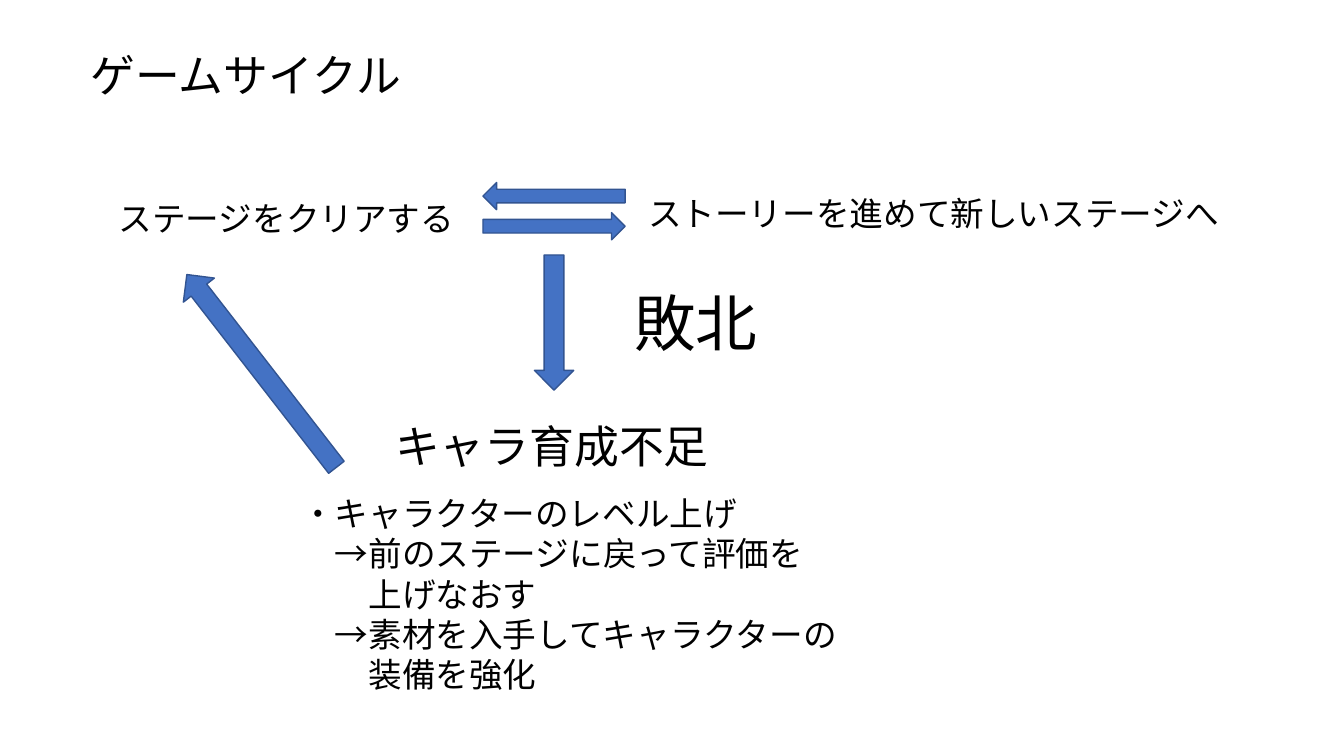
from dataclasses import dataclass

from lxml.etree import SubElement
from pptx import Presentation
from pptx.dml.color import RGBColor
from pptx.enum.shapes import MSO_SHAPE
from pptx.enum.text import MSO_ANCHOR, MSO_AUTO_SIZE
from pptx.oxml.ns import qn
from pptx.slide import Slide
from pptx.util import Emu, Pt

EMU_PER_PX = 9144  # 100 px to the inch
FONT = "Noto Sans CJK JP"
LINE_HEIGHT = 1.2
COLORS = {"text": "000000", "arrow": "4472C4", "outline": "325491"}


@dataclass(frozen=True)
class Box:
    left: int
    top: int
    width: int
    height: int


@dataclass(frozen=True)
class Line:
    text: str
    indent: int = 0  # in character widths


@dataclass(frozen=True)
class Label:
    box: Box
    size: int
    lines: tuple[Line, ...]


@dataclass(frozen=True)
class Arrow:
    box: Box
    preset: MSO_SHAPE
    rotation: float = 0


LABELS = (
    Label(Box(80, 42, 334, 64), 32, (Line("ゲームサイクル"),)),
    Label(Box(633, 186, 592, 50), 24, (Line("ストーリーを進めて新しいステージへ"),)),
    Label(Box(108, 191, 357, 50), 24, (Line("ステージをクリアする"),)),
    Label(Box(619, 278, 144, 84), 44, (Line("敗北"),)),
    Label(Box(382, 411, 334, 64), 32, (Line("キャラ育成不足"),)),
    Label(Box(289, 484, 559, 212), 24, (
        Line("・キャラクターのレベル上げ"),
        Line("→前のステージに戻って評価を", 1),
        Line("上げなおす", 2),
        Line("→素材を入手してキャラクターの", 1),
        Line("装備を強化", 2),
    )),
)

ARROWS = (
    Arrow(Box(479, 211, 141, 27), MSO_SHAPE.RIGHT_ARROW),
    Arrow(Box(479, 181, 141, 27), MSO_SHAPE.RIGHT_ARROW, 180),
    Arrow(Box(530, 253, 39, 134), MSO_SHAPE.DOWN_ARROW),
    Arrow(Box(240, 247, 39, 242), MSO_SHAPE.DOWN_ARROW, 142.2),
)


def px(length: int) -> Emu:
    return Emu(length * EMU_PER_PX)


def place(box: Box) -> tuple[Emu, Emu, Emu, Emu]:
    return px(box.left), px(box.top), px(box.width), px(box.height)


def color(name: str) -> RGBColor:
    return RGBColor.from_string(COLORS[name])


def add_label(slide: Slide, label: Label) -> None:
    frame = slide.shapes.add_textbox(*place(label.box)).text_frame
    frame.word_wrap = False
    frame.auto_size = MSO_AUTO_SIZE.SHAPE_TO_FIT_TEXT
    frame.vertical_anchor = MSO_ANCHOR.TOP
    frame.text = "\n".join(line.text for line in label.lines)
    for paragraph, line in zip(frame.paragraphs, label.lines):
        paragraph.line_spacing = Pt(label.size * LINE_HEIGHT)
        font = paragraph.font
        font.name = FONT
        font.size = Pt(label.size)
        font.color.rgb = color("text")
        # East Asian typeface and left indent
        properties = paragraph._p.get_or_add_pPr()
        SubElement(properties.find(qn("a:defRPr")), qn("a:ea"), typeface=FONT)
        if line.indent:
            properties.set("marL", str(Pt(label.size * line.indent)))


def add_arrow(slide: Slide, arrow: Arrow) -> None:
    shape = slide.shapes.add_shape(arrow.preset, *place(arrow.box))
    shape.rotation = arrow.rotation
    shape.shadow.inherit = False
    shape.fill.solid()
    shape.fill.fore_color.rgb = color("arrow")
    shape.line.color.rgb = color("outline")
    shape.line.width = Pt(1)


def main() -> None:
    presentation = Presentation()
    presentation.slide_width, presentation.slide_height = px(1333), px(750)
    slide = presentation.slides.add_slide(presentation.slide_layouts[6])

    # Stages of the game cycle
    for label in LABELS:
        add_label(slide, label)

    # Arrows between the stages
    for arrow in ARROWS:
        add_arrow(slide, arrow)

    presentation.save("out.pptx")


if __name__ == "__main__":
    main()
